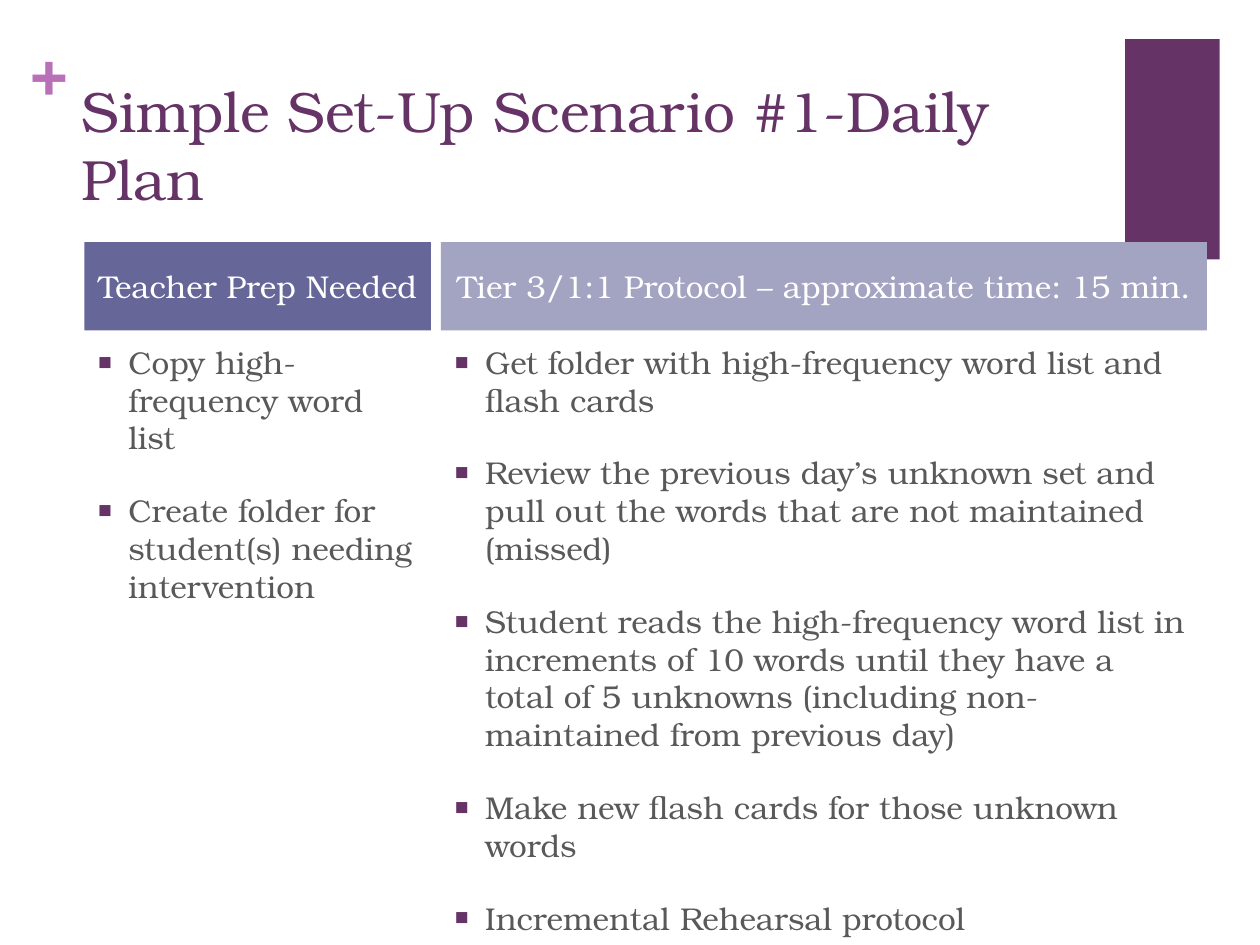
from lxml.etree import SubElement as Sub
from pptx import Presentation as Deck
from pptx.dml.color import RGBColor as Rgb
from pptx.enum.shapes import MSO_SHAPE as Kind
from pptx.enum.text import MSO_ANCHOR as Anchor, PP_ALIGN as Align
from pptx.oxml.ns import qn
from pptx.util import Cm, Pt

FONT = "TeX Gyre Bonum"
HUES = {
    "plum": "663366", "pink": "B870B8", "blue": "666699",
    "pale": "A3A3C2", "gray": "595959", "white": "FFFFFF",
}
TITLE = "Simple Set-Up Scenario #1-Daily Plan"
COLS = [
    {
        "head": "Teacher Prep Needed", "fill": "blue",
        "left": 1.7, "wide": 6.99, "body": 6.99, "tall": 9.96,
        "list": [
            "Copy high-frequency word list",
            "Create folder for student(s) needing intervention",
        ],
    },
    {
        "head": "Tier 3/1:1 Protocol – approximate time: 15 min.", "fill": "pale",
        "left": 8.89, "wide": 15.44, "body": 15.24, "tall": 11.43,
        "list": [
            "Get folder with high-frequency word list and flash cards",
            "Review the previous day’s unknown set and pull out the words that are not maintained (missed)",
            "Student reads the high-frequency word list in increments of 10 words until they have a total of 5 unknowns (including non-maintained from previous day)",
            "Make new flash cards for those unknown words",
            "Incremental Rehearsal protocol",
        ],
    },
]
HEAD_TOP, HEAD_TALL, BODY_TOP = 4.88, 1.78, 6.78


def hue(name):
    return Rgb.from_string(HUES[name])


def block(slide, box, fill):
    shape = slide.shapes.add_shape(Kind.RECTANGLE, *map(Cm, box))
    shape.shadow.inherit = False
    shape.fill.solid()
    shape.fill.fore_color.rgb = hue(fill)
    shape.line.fill.background()
    return shape


def bullet(para):
    props = para._p.get_or_add_pPr()
    props.set("marL", str(Cm(0.64)))
    props.set("indent", str(-Cm(0.64)))
    color = Sub(props, qn("a:buClr"))
    Sub(color, qn("a:srgbClr"), val=HUES["plum"])
    Sub(props, qn("a:buSzPct"), val="75000")
    Sub(props, qn("a:buFont"), typeface=FONT)
    Sub(props, qn("a:buChar"), char="■")


def write(shape, lines, size=18, color="gray", bold=False, align=Align.LEFT,
          anchor=Anchor.TOP, pad=(0.25, 0.13), wrap=True, marks=False):
    frame = shape.text_frame
    frame.word_wrap = wrap
    frame.vertical_anchor = anchor
    frame.margin_left = frame.margin_right = Cm(pad[0])
    frame.margin_top = frame.margin_bottom = Cm(pad[1])
    for i, line in enumerate(lines):
        para = frame.add_paragraph() if i else frame.paragraphs[0]
        para.alignment = align
        if marks:
            para.space_before = Pt(20)
            bullet(para)
        run = para.add_run()
        run.text = line
        font = run.font
        font.name, font.size, font.bold = FONT, Pt(size), bold
        font.color.rgb = hue(color)


def label(slide, box, lines, **form):
    write(slide.shapes.add_textbox(*map(Cm, box)), lines, **form)


def main():
    deck = Deck()
    deck.slide_width, deck.slide_height = Cm(25.4), Cm(19.05)
    slide = deck.slides.add_slide(deck.slide_layouts[6])

    block(slide, (22.68, 0.79, 1.91, 4.44), "plum")
    label(slide, (0.61, 0.64, 0.71, 1.55), ["+"], size=36, color="pink",
          bold=True, pad=(0, 0), wrap=False)
    label(slide, (1.4, 1.35, 20.98, 3.1), [TITLE], size=32.4, color="plum",
          anchor=Anchor.MIDDLE)

    for col in COLS:
        label(slide, (col["left"], BODY_TOP, col["body"], col["tall"]),
              col["list"], marks=True)
        head = block(slide, (col["left"], HEAD_TOP, col["wide"], HEAD_TALL), col["fill"])
        write(head, [col["head"]], color="white", align=Align.CENTER,
              anchor=Anchor.MIDDLE, pad=(0.25, 0))

    deck.save("out.pptx")


if __name__ == "__main__":
    main()
